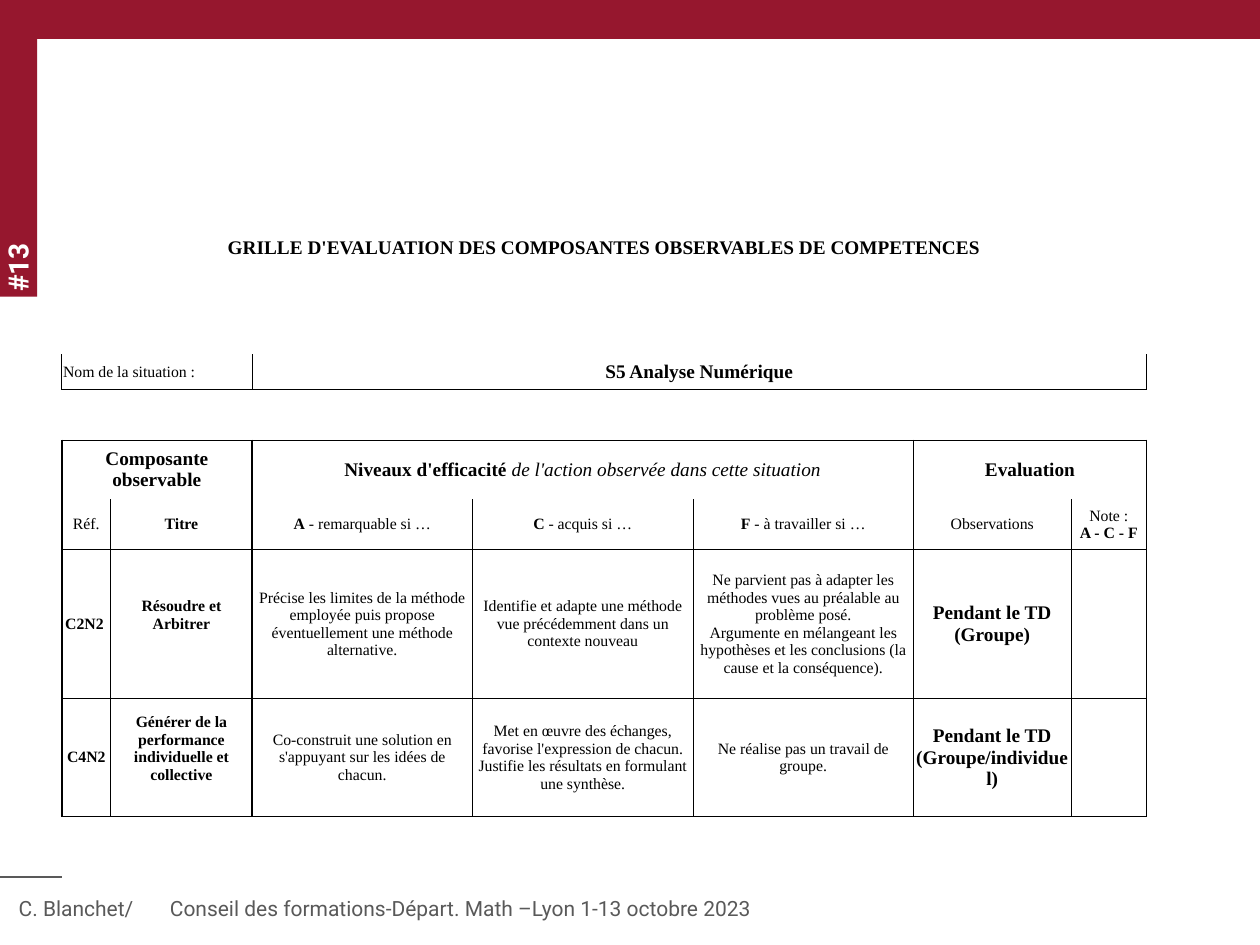
import pptx
import pptx.util
import pptx.dml.color
import pptx.enum.shapes
import pptx.enum.text
import pptx.oxml
import pptx.oxml.ns
from lxml import etree

Inches, Pt = pptx.util.Inches, pptx.util.Pt
RGBColor = pptx.dml.color.RGBColor
qn = pptx.oxml.ns.qn
ALIGN = pptx.enum.text.PP_ALIGN

CRIMSON = RGBColor(0x96, 0x17, 0x2E)
GREY = RGBColor(0x59, 0x59, 0x59)
WHITE = RGBColor(0xFF, 0xFF, 0xFF)
BLACK = RGBColor(0, 0, 0)

COLUMNS = [0.39, 1.12, 1.75, 1.75, 1.75, 1.25, 0.6]
ROWS = [0.88, 0.13, 0.19, 0.13, 0.37, 0.3, 1.18, 0.94]

# Borders are coded left, top, right, bottom: T thick, t thin, - none.
WIDTHS = {"T": 0.96, "t": 0.5}
SMALL, LARGE = 9, 11
BOLD, ITALIC, PLAIN = "bold", "italic", "plain"

# Cell: borders, size, columns spanned, runs of (text, style)
GRID = [
    [("----", LARGE, 7, [("GRILLE D'EVALUATION DES COMPOSANTES OBSERVABLES DE COMPETENCES", BOLD)])],
    [("----", None, 1, [])] * 7,
    [("tttt", SMALL, 2, [("Nom de la situation :", PLAIN)]),
     ("tttt", LARGE, 5, [("S5 Analyse Numérique", BOLD)])],
    [("-t-T", None, 1, [])] * 7,
    [("TTT-", LARGE, 2, [("Composante observable", BOLD)]),
     ("TTT-", LARGE, 3, [("Niveaux d'efficacité ", BOLD),
                         ("de l'action observée dans cette situation", ITALIC)]),
     ("TTT-", LARGE, 2, [("Evaluation", BOLD)])],
    [("T-tT", SMALL, 1, [("Réf.", PLAIN)]),
     ("t-TT", SMALL, 1, [("Titre", BOLD)]),
     ("T-tt", SMALL, 1, [("A", BOLD), (" - remarquable si …", PLAIN)]),
     ("t-tT", SMALL, 1, [("C", BOLD), (" - acquis si …", PLAIN)]),
     ("t-TT", SMALL, 1, [("F", BOLD), (" - à travailler si …", PLAIN)]),
     ("T-tT", SMALL, 1, [("Observations", PLAIN)]),
     ("t-TT", SMALL, 1, [("Note :\n", PLAIN), ("A - C - F", BOLD)])],
    [("TTtT", SMALL, 1, [("C2N2 ", BOLD)]),
     ("tTTt", SMALL, 1, [("Résoudre et Arbitrer", BOLD)]),
     ("Tttt", SMALL, 1, [("Précise les limites de la méthode employée puis propose "
                          "éventuellement une méthode alternative.", PLAIN)]),
     ("tTtt", SMALL, 1, [("Identifie et adapte une méthode vue précédemment "
                          "dans un contexte nouveau", PLAIN)]),
     ("tTTt", SMALL, 1, [("Ne parvient pas à adapter les méthodes vues au préalable au problème posé.\n"
                          "Argumente en mélangeant les hypothèses et les conclusions "
                          "(la cause et la conséquence).", PLAIN)]),
     ("TTtT", LARGE, 1, [("Pendant le TD (Groupe)", BOLD)]),
     ("tTTt", None, 1, [])],
    [("TTtt", SMALL, 1, [("C4N2", BOLD)]),
     ("ttTt", SMALL, 1, [("Générer de la\nperformance individuelle et collective", BOLD)]),
     ("Tttt", SMALL, 1, [("Co-construit une solution en s'appuyant sur les idées de chacun.", PLAIN)]),
     ("tttt", SMALL, 1, [("Met en œuvre des échanges, favorise l'expression de chacun.\n"
                          "Justifie les résultats en formulant une synthèse.", PLAIN)]),
     ("ttTt", SMALL, 1, [("Ne réalise pas un travail de groupe.", PLAIN)]),
     ("TTtt", LARGE, 1, [("Pendant le TD (Groupe/individuel)", BOLD)]),
     ("ttTt", None, 1, [])],
]
LEFT_ALIGNED = (2, 0)
RAISED = [(6, 1), (7, 1)]  # titles sitting half a line above the middle


def add_band(page, left, top, width, height, rotation=0):
    band = page.shapes.add_shape(pptx.enum.shapes.MSO_SHAPE.RECTANGLE, Inches(left),
                                 Inches(top), Inches(width), Inches(height))
    band.rotation = rotation
    band.shadow.inherit = False
    band.fill.solid()
    band.fill.fore_color.rgb = CRIMSON
    band.line.fill.background()


def add_label(page, text, place, size, color, bold=False, rotation=0, tab=None):
    box = page.shapes.add_textbox(*map(Inches, place))
    box.rotation = rotation
    box.text_frame.word_wrap = True
    para = box.text_frame.paragraphs[0]
    para.text = text
    if tab:
        tabs = etree.SubElement(para._p.get_or_add_pPr(), qn("a:tabLst"))
        etree.SubElement(tabs, qn("a:tab"), pos=str(Inches(tab)), algn="l")
    for span in para.runs:
        style_span(span, "Roboto", size, color, bold)


def style_span(span, name, size, color, bold=False, italic=False):
    font = span.font
    font.name, font.size, font.bold, font.italic = name, Pt(size), bold, italic
    font.color.rgb = color


def set_borders(cell, codes):
    """Draw the sides given as left, top, right, bottom codes."""
    properties = cell._tc.get_or_add_tcPr()
    sides = dict(zip("LTRB", codes))
    for side in "LRTB":
        line = etree.SubElement(properties, qn(f"a:ln{side}"))
        if sides[side] == "-":
            etree.SubElement(line, qn("a:noFill"))
        else:
            line.set("w", str(Pt(WIDTHS[sides[side]])))
            fill = etree.SubElement(line, qn("a:solidFill"))
            etree.SubElement(fill, qn("a:srgbClr"), val=str(BLACK))


def fill_cell(cell, size, runs):
    cell.vertical_anchor = pptx.enum.text.MSO_ANCHOR.MIDDLE
    cell.margin_left = cell.margin_right = Inches(0.01)
    para = cell.text_frame.paragraphs[0]
    para.alignment = ALIGN.CENTER
    for text, style in runs:
        for index, piece in enumerate(text.split("\n")):
            if index:
                para.add_line_break()
            if piece:
                span = para.add_run()
                span.text = piece
                style_span(span, "Times New Roman", size, BLACK, style == BOLD, style == ITALIC)


def add_grid(page):
    frame = page.shapes.add_table(len(ROWS), len(COLUMNS), Inches(0.49), Inches(1.53),
                                  Inches(sum(COLUMNS)), Inches(sum(ROWS)))
    table = frame.table
    table.first_row = table.horz_banding = False
    for column, width in zip(table.columns, COLUMNS):
        column.width = Inches(width)
    for row, height in zip(table.rows, ROWS):
        row.height = Inches(height)
    for r, cells in enumerate(GRID):
        c = 0
        for borders, size, width, runs in cells:
            cell = table.cell(r, c)
            if width > 1:
                cell.merge(table.cell(r, c + width - 1))
            for covered in range(c, c + width):
                set_borders(table.cell(r, covered), borders if covered == c else "----")
                table.cell(r, covered).fill.background()
            if runs:
                fill_cell(cell, size, runs)
            c += width
    table.cell(*LEFT_ALIGNED).text_frame.paragraphs[0].alignment = ALIGN.LEFT
    for position in RAISED:
        table.cell(*position).margin_bottom = Inches(0.19)


def main():
    deck = pptx.Presentation()
    deck.slide_width, deck.slide_height = Inches(10), Inches(7.5)
    page = deck.slides.add_slide(deck.slide_layouts[6])

    add_band(page, -0.02, 0, 10.02, 0.31)
    add_band(page, -1.04, 1.02, 2.36, 0.31, rotation=270)
    add_label(page, "#13", (-0.82, 1.28, 1.91, 0.36), 16, WHITE, bold=True, rotation=270)

    rule = page.shapes.add_connector(pptx.enum.shapes.MSO_CONNECTOR.STRAIGHT,
                                     Inches(0), Inches(6.96), Inches(0.49), Inches(6.96))
    rule.line.color.rgb = GREY
    rule.line.width = Pt(0.75)
    etree.SubElement(rule._element.spPr, qn("a:effectLst"))
    add_label(page, "C. Blanchet/\tConseil des formations-Départ. Math –Lyon 1-13 octobre 2023",
              (0.05, 7.06, 8.42, 0.3), 12, GREY, tab=1.2)

    add_grid(page)
    deck.save("out.pptx")


if __name__ == "__main__":
    main()
